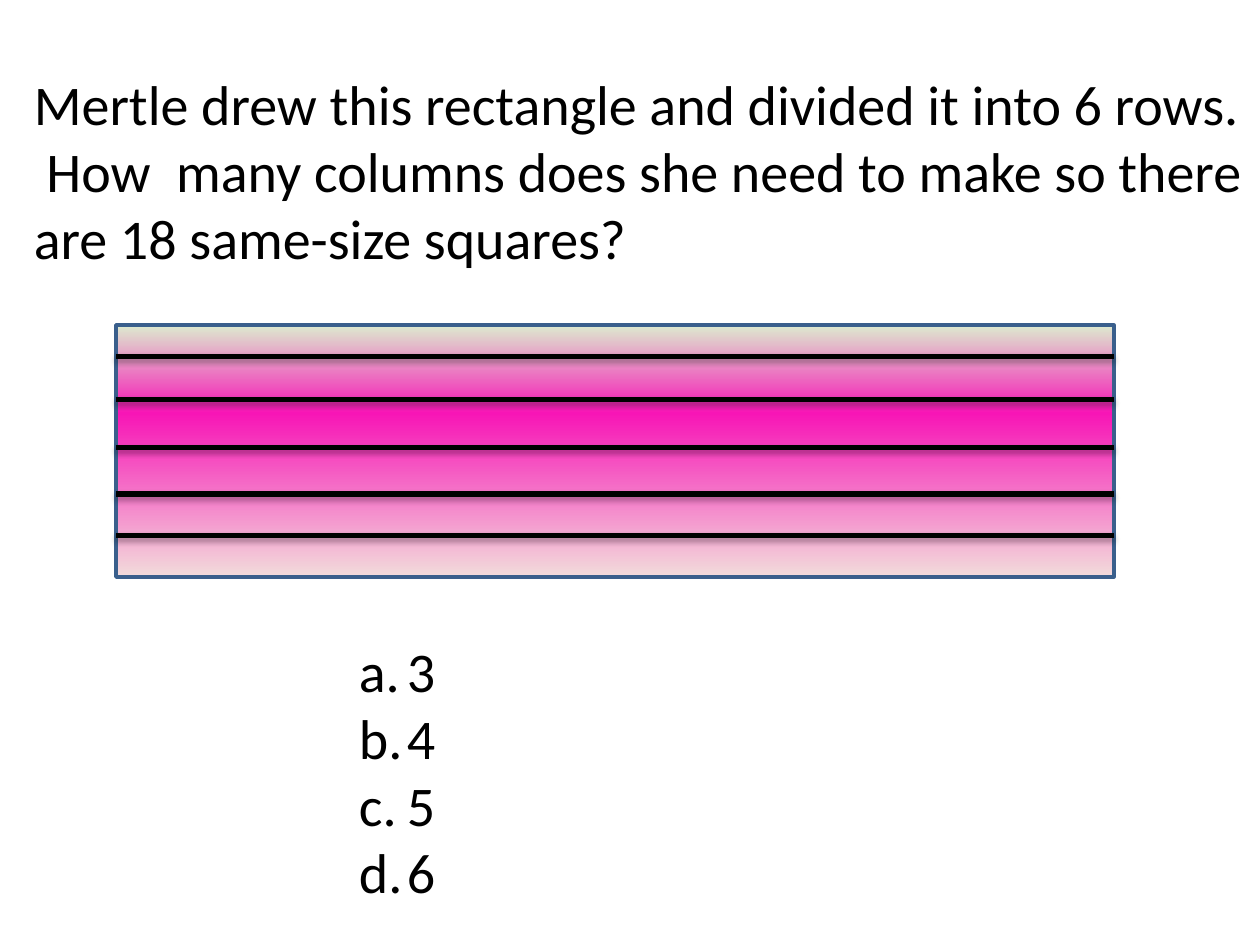
from lxml import etree
from pptx import Presentation
from pptx.dml.color import RGBColor
from pptx.enum.shapes import MSO_CONNECTOR, MSO_SHAPE
from pptx.enum.text import MSO_AUTO_SIZE
from pptx.oxml import parse_xml
from pptx.oxml.ns import nsdecls, qn
from pptx.util import Inches, Pt

RECT = MSO_SHAPE.RECTANGLE
STRAIGHT = MSO_CONNECTOR.STRAIGHT
FIT_SHAPE = MSO_AUTO_SIZE.SHAPE_TO_FIT_TEXT

# Content
QUESTION = [
    "Mertle drew this rectangle and divided it into 6 rows.",
    " How  many columns does she need to make so there",
    "are 18 same-size squares?",
]
ANSWERS = ["3", "4", "5", "6"]

COLORS = {"text": "000000", "divider": "000000", "border": "3A5F8C"}
GRADIENT = [(0, "DDEBCF"), (35, "F715B6"), (100, "F2DCDB")]

# Layout in inches; the dividers are spaced by hand
LEFT, TOP, WIDTH, HEIGHT = 0.92, 2.58, 7.92, 2
DIVIDERS = [2.83, 3.17, 3.55, 3.92, 4.25]
INDENT = 0.38


def rgb(name):
    return RGBColor.from_string(COLORS[name])


def add_text(slide, lines, box, size=32, font="Calibri", color="text", lettered=False):
    tf = slide.shapes.add_textbox(*map(Inches, box)).text_frame
    tf.word_wrap = False
    tf.auto_size = FIT_SHAPE
    for i, line in enumerate(lines):
        p = tf.paragraphs[0] if i == 0 else tf.add_paragraph()
        if lettered:
            pPr = p._p.get_or_add_pPr()
            pPr.set("marL", str(Inches(INDENT)))
            pPr.set("indent", str(-Inches(INDENT)))
            etree.SubElement(pPr, qn("a:buAutoNum"), type="alphaLcPeriod")
        r = p.add_run()
        r.text = line
        r.font.size = Pt(size)
        r.font.name = font
        r.font.color.rgb = rgb(color)


def add_rectangle(slide):
    sp = slide.shapes.add_shape(RECT, *map(Inches, (LEFT, TOP, WIDTH, HEIGHT)))
    sp.shadow.inherit = False
    sp.line.color.rgb = rgb("border")
    sp.line.width = Pt(2)
    sp.fill.gradient()
    stops = "".join(
        f'<a:gs pos="{pos * 1000}"><a:srgbClr val="{color}"/></a:gs>'
        for pos, color in GRADIENT
    )
    grad = parse_xml(
        f'<a:gradFill {nsdecls("a")} rotWithShape="1"><a:gsLst>{stops}</a:gsLst>'
        '<a:lin ang="5400000" scaled="0"/></a:gradFill>'
    )
    spPr = sp._element.spPr
    spPr.replace(spPr.find(qn("a:gradFill")), grad)


def add_divider(slide, y):
    line = slide.shapes.add_connector(
        STRAIGHT, *map(Inches, (LEFT, y, LEFT + WIDTH, y))
    )
    line.line.color.rgb = rgb("divider")
    line.line.width = Pt(3)
    line._element.spPr.append(parse_xml(
        f'<a:effectLst {nsdecls("a")}><a:outerShdw blurRad="{Pt(3.1)}" '
        f'dist="{Pt(1.8)}" dir="5400000" rotWithShape="0">'
        f'<a:srgbClr val="{COLORS["divider"]}"><a:alpha val="35000"/></a:srgbClr>'
        '</a:outerShdw></a:effectLst>'
    ))


def main():
    prs = Presentation()
    prs.slide_width, prs.slide_height = Inches(10), Inches(7.5)
    s = prs.slides.add_slide(prs.slide_layouts[6])

    # Question
    add_text(s, QUESTION, (0.17, 0.5, 9.97, 1.72))

    # Rectangle divided into rows
    add_rectangle(s)
    for y in DIVIDERS:
        add_divider(s, y)

    # Answer choices
    add_text(s, ANSWERS, (2.75, 5, 0.91, 2.26), lettered=True)

    prs.save("out.pptx")


if __name__ == "__main__":
    main()
